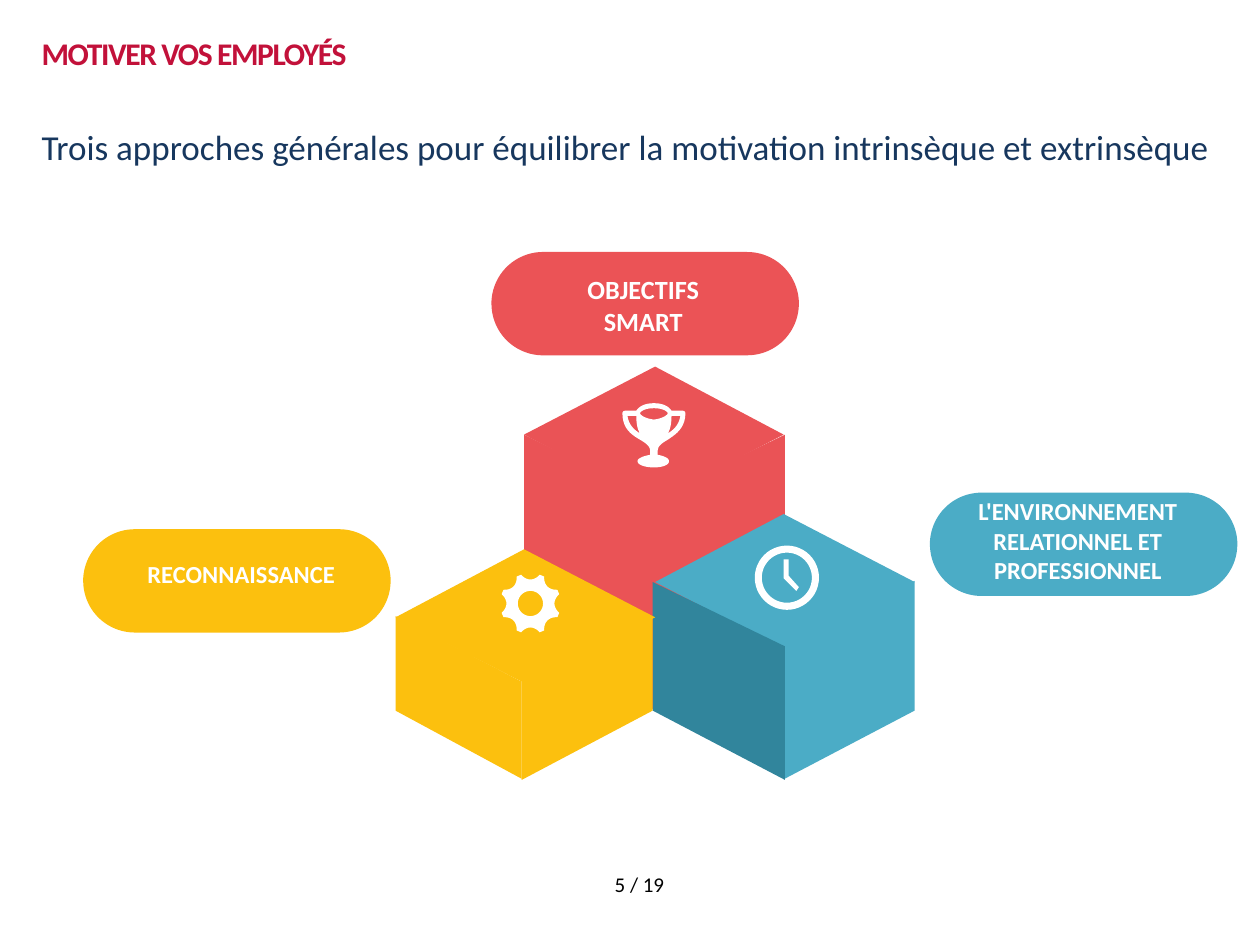
"""Build the slide on three approaches to balancing employee motivation."""
from math import cos, radians, sin

from pptx import Presentation
from pptx.dml.color import RGBColor
from pptx.enum.shapes import MSO_SHAPE
from pptx.enum.text import MSO_ANCHOR, PP_ALIGN
from pptx.util import Inches, Pt

RECT, PILL, DONUT = MSO_SHAPE.RECTANGLE, MSO_SHAPE.ROUND_2_SAME_RECTANGLE, MSO_SHAPE.DONUT
TOP = MSO_ANCHOR.TOP
CENTER, JUSTIFY = PP_ALIGN.CENTER, PP_ALIGN.JUSTIFY
WHITE = RGBColor(0xFF, 0xFF, 0xFF)
BLACK = RGBColor(0x00, 0x00, 0x00)
NAVY = RGBColor(0x17, 0x37, 0x5E)
CRIMSON = RGBColor(0xC2, 0x11, 0x3A)
YELLOW = RGBColor(0xFC, 0xC0, 0x0E)
RED = RGBColor(0xEA, 0x53, 0x56)
CORAL = RGBColor(0xEB, 0x53, 0x56)
TEAL = RGBColor(0x4B, 0xAC, 0xC6)
DARK_TEAL = RGBColor(0x31, 0x85, 0x9C)

prs = Presentation()
prs.slide_width, prs.slide_height = Inches(10), Inches(7.5)
slide = prs.slides.add_slide(prs.slide_layouts[6])
shapes = slide.shapes


def add_outline(contours, color):
    """Draw closed contours of points (x, y) and Bezier curves (x1, y1, x2, y2, x, y)."""
    builder = None
    for contour in contours:
        points = []
        for step in contour:
            if len(step) == 2:
                points.append(step)
                continue
            nodes = [points[-1], step[:2], step[2:4], step[4:]]
            for t in (i / 10 for i in range(1, 11)):
                weights = ((1 - t) ** 3, 3 * t * (1 - t) ** 2, 3 * t * t * (1 - t), t ** 3)
                points.append(tuple(sum(w * n[axis] for w, n in zip(weights, nodes))
                                    for axis in (0, 1)))
        points = [(Inches(x), Inches(y)) for x, y in points]
        if builder is None:
            builder = shapes.build_freeform(*points[0])
        else:
            builder.move_to(*points[0])
        builder.add_line_segments(points[1:], close=True)
    outline = builder.convert_to_shape()
    outline.shadow.inherit = False
    outline.fill.solid()
    outline.fill.fore_color.rgb = color
    outline.line.fill.background()


def add_preset(kind, place, color):
    """Add a flat preset shape without an outline."""
    preset = shapes.add_shape(kind, *map(Inches, place))
    preset.shadow.inherit = False
    preset.fill.solid()
    preset.fill.fore_color.rgb = color
    preset.line.fill.background()
    return preset


for left, top, color in ((1.47, 3.39, YELLOW), (4.71, 1.19, CORAL), (8.19, 3.1, TEAL)):
    pill = add_preset(PILL, (left, top, 0.82, 2.44), color)
    pill.rotation = 90
    pill.adjustments[0] = pill.adjustments[1] = 0.5

cube_faces = [
    (RED, [(4.16, 3.45), (5.2, 2.91), (6.22, 3.45), (5.19, 3.98)]),
    (RED, [(6.23, 5.09), (5.17, 5.63), (5.17, 3.96), (6.23, 3.45)]),
    (RED, [(4.16, 5.09), (5.2, 5.63), (5.2, 3.96), (4.16, 3.45)]),
    (TEAL, [(5.2, 4.62), (6.22, 4.08), (7.26, 4.62), (6.22, 5.15)]),
    (TEAL, [(7.26, 5.64), (6.23, 6.18), (6.23, 5.12), (7.26, 4.61)]),
    (DARK_TEAL, [(5.18, 5.64), (6.23, 6.19), (6.23, 5.13), (5.18, 4.62)]),
    (YELLOW, [(3.14, 4.9), (4.16, 4.36), (5.2, 4.9), (4.16, 5.42)]),
    (YELLOW, [(5.18, 5.64), (4.14, 6.19), (4.14, 5.41), (5.18, 4.9)]),
    (YELLOW, [(3.14, 5.64), (4.14, 6.18), (4.14, 5.41), (3.14, 4.89)]),
]
for color, corners in cube_faces:
    add_outline([corners], color)

cup = [
    (5.22, 3.58), (5.22, 3.54, 5.25, 3.52, 5.3, 3.49), (5.36, 3.45, 5.44, 3.4, 5.44, 3.28),
    (5.44, 3.27, 5.43, 3.26, 5.42, 3.26), (5.33, 3.26), (5.31, 3.23, 5.27, 3.2, 5.19, 3.2),
    (5.11, 3.2, 5.07, 3.23, 5.05, 3.26), (4.96, 3.26), (4.95, 3.26, 4.94, 3.27, 4.94, 3.28),
    (4.94, 3.4, 5.01, 3.45, 5.08, 3.49), (5.13, 3.52, 5.16, 3.54, 5.16, 3.58), (5.16, 3.61),
    (5.1, 3.62, 5.06, 3.64, 5.06, 3.66), (5.06, 3.69, 5.12, 3.71, 5.19, 3.71),
    (5.26, 3.71, 5.31, 3.69, 5.31, 3.66), (5.31, 3.64, 5.28, 3.62, 5.22, 3.61),
]
cup_mouth = [
    (5.19, 3.24), (5.27, 3.24, 5.3, 3.27, 5.3, 3.28), (5.3, 3.29, 5.27, 3.32, 5.19, 3.33),
    (5.11, 3.32, 5.08, 3.29, 5.08, 3.28), (5.08, 3.27, 5.11, 3.24, 5.19, 3.24),
]
right_handle = [(5.3, 3.44), (5.32, 3.41, 5.33, 3.36, 5.33, 3.3), (5.4, 3.3),
                (5.39, 3.37, 5.35, 3.41, 5.3, 3.44)]
left_handle = [tuple(10.38 - v if i % 2 == 0 else v for i, v in enumerate(step))
               for step in right_handle]
add_outline([cup, cup_mouth, right_handle, left_handle], WHITE)

clock_ring = add_preset(DONUT, (5.99, 4.33, 0.51, 0.51), WHITE)
clock_ring.adjustments[0] = 0.11
add_outline([[(6.26, 4.44), (6.22, 4.44), (6.22, 4.59), (6.32, 4.69), (6.34, 4.66),
              (6.26, 4.57)]], WHITE)

gear_x, gear_y = 4.21, 4.79
gear_rim = []
for notch in range(0, 360, 45):
    start, *curve = [(gear_x + radius * cos(radians(notch + turn)),
                      gear_y + radius * sin(radians(notch + turn)))
                     for radius, turn in ((0.24, -18), (0.18, -9), (0.18, 9), (0.24, 18))]
    gear_rim += [start, tuple(v for point in curve for v in point)]
gear_hole = [(gear_x + 0.1 * cos(radians(a)), gear_y + 0.1 * sin(radians(a)))
             for a in range(0, 360, 10)]
add_outline([gear_rim, gear_hole], WHITE)

heading = {"alignment": JUSTIFY, "line_spacing": Pt(20), "space_after": Pt(12)}
centered = {"alignment": CENTER}
labels = [
    ((0.33, 1.05, 9.33, 0.76), None, 0, heading, 20, False, NAVY,
     ["Trois approches générales pour équilibrer la motivation intrinsèque et extrinsèque"]),
    ((4.43, 2.17, 1.35, 0.51), CORAL, 0, centered, 15, True, WHITE, ["OBJECTIFS", "SMART"]),
    ((0.9, 4.44, 2.03, 0.24), None, 0, centered, 14, True, WHITE, ["RECONNAISSANCE"]),
    ((7.54, 3.94, 2.03, 0.71), None, 0, centered, 14, True, WHITE,
     ["L'ENVIRONNEMENT RELATIONNEL ET PROFESSIONNEL"]),
    ((0.33, 0.29, 9.33, 0.76), WHITE, 0, heading, 18, True, CRIMSON, ["MOTIVER VOS EMPLOYÉS"]),
    ((4.38, 6.87, 1.39, 0.31), None, 0.05, centered, 12, False, BLACK, ["5 / 19"]),
]
for place, backing, inset, layout, size, bold, color, lines in labels:
    if backing is None:
        label = shapes.add_textbox(*map(Inches, place))
    else:
        label = add_preset(RECT, place, backing)
    frame = label.text_frame
    margin = Inches(inset)
    for name, value in {"word_wrap": True, "vertical_anchor": TOP, "margin_left": margin,
                        "margin_right": margin, "margin_top": margin,
                        "margin_bottom": margin}.items():
        setattr(frame, name, value)
    frame.text = "\n".join(lines)
    for paragraph in frame.paragraphs:
        for name, value in layout.items():
            setattr(paragraph, name, value)
        for run in paragraph.runs:
            for name, value in {"name": "Calibri", "size": Pt(size), "bold": bold}.items():
                setattr(run.font, name, value)
            run.font.color.rgb = color
            if color == CRIMSON:
                run.font._element.set("spc", "-80")

prs.save("out.pptx")
